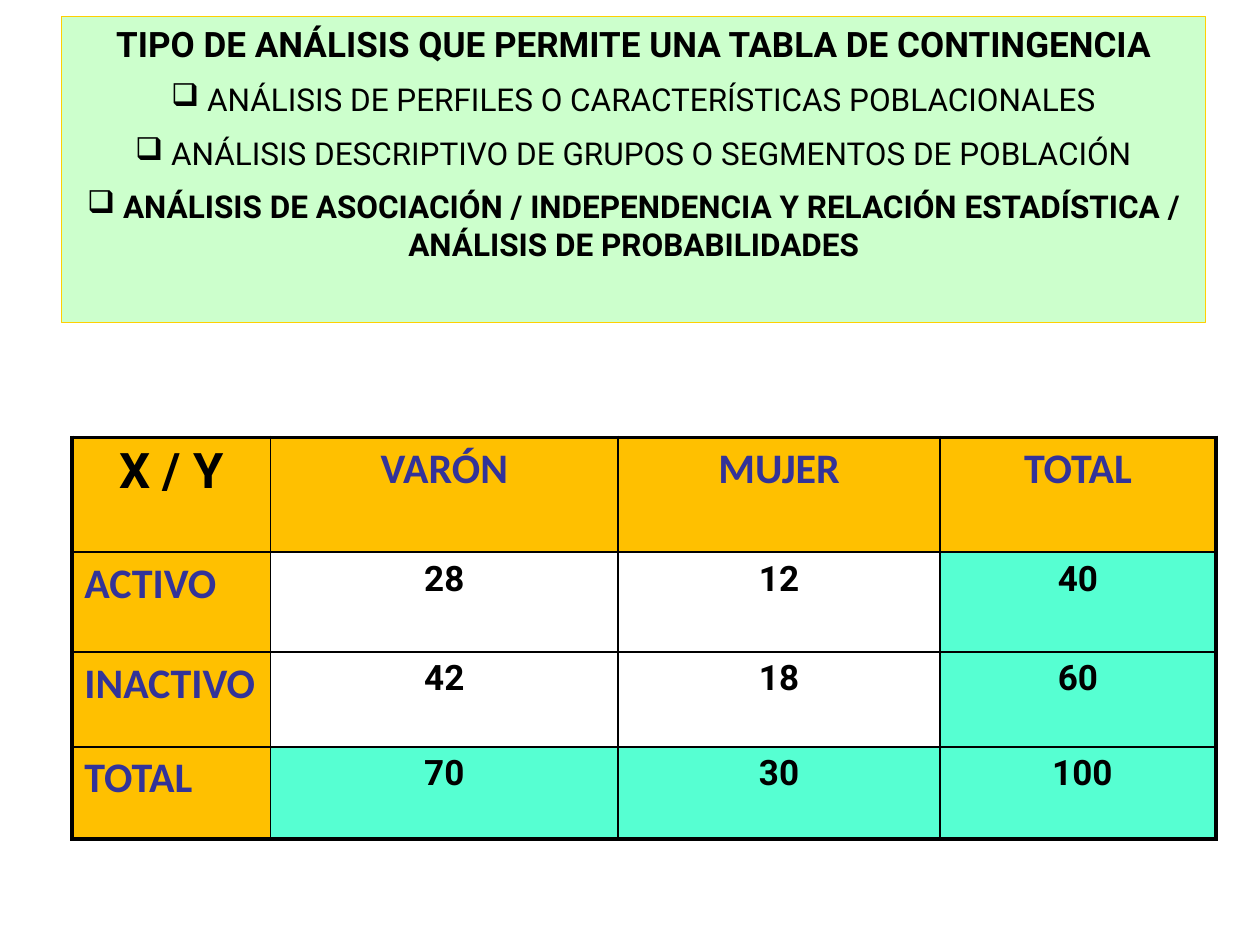
from dataclasses import dataclass

from lxml.etree import SubElement
from pptx import Presentation
from pptx.dml.color import RGBColor
from pptx.enum.shapes import MSO_SHAPE
from pptx.enum.text import MSO_ANCHOR, PP_ALIGN
from pptx.oxml.ns import qn
from pptx.util import Inches, Pt


@dataclass(frozen=True)
class Theme:
    ink: str = "000000"
    label: str = "333399"
    paper: str = "FFFFFF"
    header: str = "FFC000"
    total: str = "56FFD2"
    panel: str = "CCFFCC"
    panel_line: str = "FFCF01"
    body_font: str = "Roboto"
    label_font: str = "Calibri"
    corner_size: int = 28
    label_size: int = 24
    heading_size: int = 20
    value_size: int = 20
    item_size: int = 18
    outer_line: float = 2.25
    inner_line: float = 1


THEME = Theme()
BULLET = "❑"
HEADING = "TIPO DE ANÁLISIS QUE PERMITE UNA TABLA DE CONTINGENCIA"
ITEMS = [
    ("ANÁLISIS DE PERFILES O CARACTERÍSTICAS POBLACIONALES", False),
    ("ANÁLISIS DESCRIPTIVO DE GRUPOS O SEGMENTOS DE POBLACIÓN", False),
    ("ANÁLISIS DE ASOCIACIÓN / INDEPENDENCIA Y RELACIÓN ESTADÍSTICA / "
     "ANÁLISIS DE PROBABILIDADES", True),
]
CONTINGENCY = [
    ["X / Y", "VARÓN", "MUJER", "TOTAL"],
    ["ACTIVO", "28", "12", "40"],
    ["INACTIVO", "42", "18", "60"],
    ["TOTAL", "70", "30", " 100"],
]
COL_SHARES = [1.58, 2.76, 2.56, 2.19]
ROW_SHARES = [0.91, 0.79, 0.75, 0.73]


def rgb(value):
    return RGBColor.from_string(value)


def add_run(p, text, size, font=THEME.body_font, color=THEME.ink, bold=True):
    r = p.add_run()
    r.text = text
    r.font.size, r.font.name, r.font.bold = Pt(size), font, bold
    r.font.color.rgb = rgb(color)


def add_bullet(p):
    pPr = p._p.get_or_add_pPr()
    pPr.set("marL", "0")
    pPr.set("indent", "0")
    SubElement(pPr, qn("a:buChar"), char=BULLET)


def add_analysis_panel(slide, left, top, width, height):
    sp = slide.shapes.add_shape(MSO_SHAPE.RECTANGLE, left, top, width, height)
    sp.shadow.inherit = False
    sp.fill.solid()
    sp.fill.fore_color.rgb = rgb(THEME.panel)
    sp.line.color.rgb = rgb(THEME.panel_line)
    sp.line.width = Pt(0.75)
    tf = sp.text_frame
    tf.word_wrap = True
    tf.vertical_anchor = MSO_ANCHOR.TOP
    p = tf.paragraphs[0]
    p.alignment = PP_ALIGN.CENTER
    p.space_before = Pt(THEME.heading_size / 2)
    add_run(p, HEADING, THEME.heading_size)
    for text, bold in ITEMS:
        p = tf.add_paragraph()
        p.alignment = PP_ALIGN.CENTER
        p.space_before = Pt(THEME.item_size / 2)
        add_bullet(p)
        add_run(p, " ", THEME.item_size, bold=False)
        add_run(p, text, THEME.item_size, bold=bold)


def set_borders(cell, outer):
    """Draw all four sides, thicker on those named in outer."""
    tcPr = cell._tc.get_or_add_tcPr()
    for i, side in enumerate("LRTB"):
        weight = THEME.outer_line if side in outer else THEME.inner_line
        ln = SubElement(tcPr, qn(f"a:ln{side}"), w=str(Pt(weight)))
        SubElement(SubElement(ln, qn("a:solidFill")), qn("a:srgbClr"), val=THEME.ink)
        tcPr.insert(i, ln)


def fill_cell(cell, text, row, col, last_row, last_col):
    is_label = row == 0 or col == 0
    is_total = row == last_row or col == last_col
    fill = THEME.header if is_label else THEME.total if is_total else THEME.paper
    cell.fill.solid()
    cell.fill.fore_color.rgb = rgb(fill)
    edges = {"L": col == 0, "R": col == last_col, "T": row == 0, "B": row == last_row}
    set_borders(cell, [side for side, on_edge in edges.items() if on_edge])
    p = cell.text_frame.paragraphs[0]
    p.alignment = PP_ALIGN.LEFT if col == 0 and row > 0 else PP_ALIGN.CENTER
    if row == col == 0:
        add_run(p, text, THEME.corner_size)
    elif is_label:
        add_run(p, text, THEME.label_size, THEME.label_font, THEME.label)
    else:
        add_run(p, text, THEME.value_size)


def add_contingency_table(slide, left, top, width, height):
    rows, cols = len(CONTINGENCY), len(CONTINGENCY[0])
    table = slide.shapes.add_table(rows, cols, left, top, width, height).table
    table.first_row = table.horz_banding = False
    for col, share in zip(table.columns, COL_SHARES):
        col.width = int(width * share / sum(COL_SHARES))
    for row, share in zip(table.rows, ROW_SHARES):
        row.height = int(height * share / sum(ROW_SHARES))
    for i, values in enumerate(CONTINGENCY):
        for j, text in enumerate(values):
            fill_cell(table.cell(i, j), text, i, j, rows - 1, cols - 1)


def main():
    prs = Presentation()
    prs.slide_width, prs.slide_height = Inches(10), Inches(7.5)
    slide = prs.slides.add_slide(prs.slide_layouts[6])
    add_contingency_table(slide, Inches(0.57), Inches(3.47), Inches(9.08), Inches(3.19))
    add_analysis_panel(slide, Inches(0.49), Inches(0.13), Inches(9.08), Inches(2.43))
    prs.save("out.pptx")


if __name__ == "__main__":
    main()
